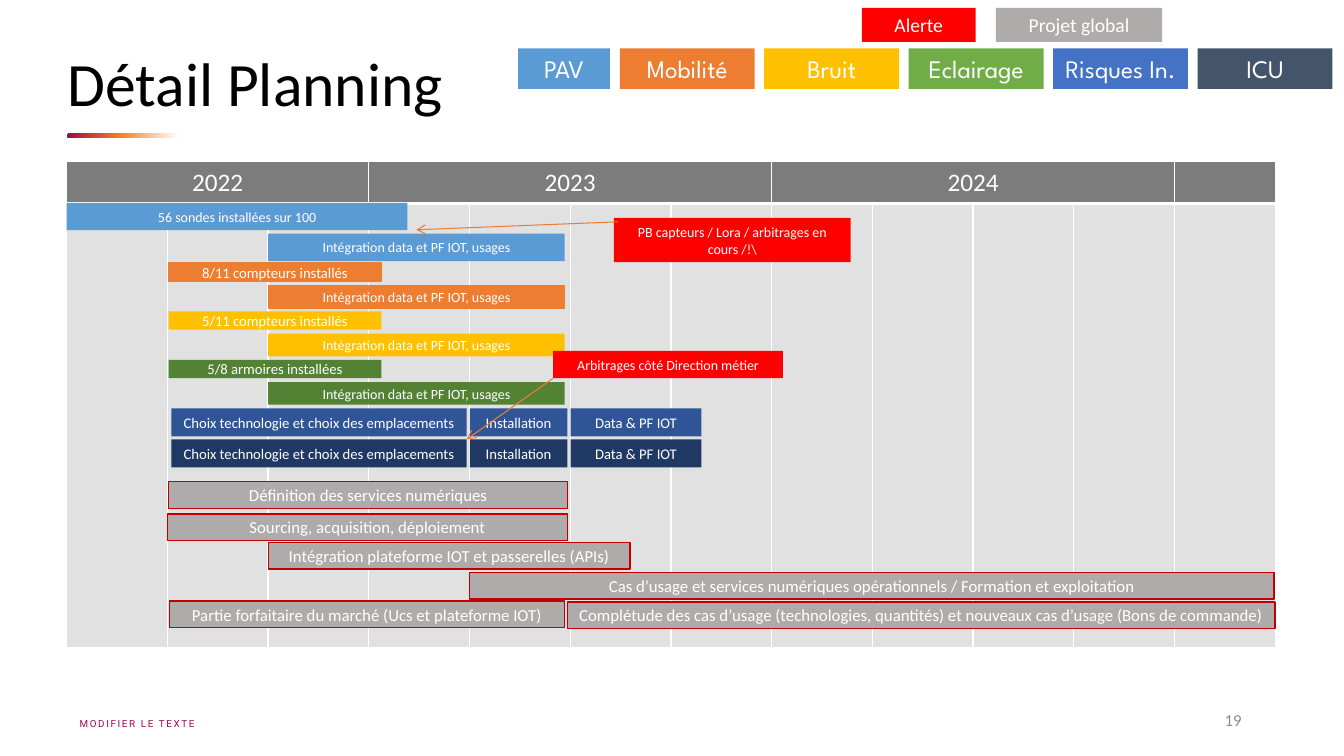
from copy import deepcopy
from dataclasses import dataclass

from lxml import etree
from pptx import Presentation
from pptx import util as u
from pptx.dml.color import RGBColor
from pptx.enum import shapes, text
from pptx.oxml.ns import qn


@dataclass(frozen=True)
class Theme:
    font: str = "Calibri"
    legend_font: str = "League Spartan"
    footer_font: str = "Roboto"
    black: str = "000000"
    white: str = "FFFFFF"
    header: str = "7C7C7C"
    body: str = "E1E1E1"
    number: str = "8C8C8C"
    accent: str = "9C0A4A"
    accent_mid: str = "F58221"
    blue: str = "5B9BD5"
    orange: str = "ED7D31"
    yellow: str = "FFC000"
    green: str = "70AD47"
    dark_green: str = "548235"
    royal: str = "4472C4"
    dark_royal: str = "2F5597"
    slate: str = "44546A"
    navy: str = "203864"
    project: str = "AFABAB"
    outline: str = "C00000"
    alert: str = "FF0000"
    title_size: float = 44
    legend_size: float = 18
    key_size: float = 14
    project_size: float = 12
    step_size: float = 10.5
    bar_size: float = 10
    footer_size: float = 7


class PlanningSlide:
    def __init__(self, page, theme):
        self.page = page
        self.theme = theme

    def set_text(self, frame, words, size, color, align, font=None):
        frame.text = words
        frame.word_wrap = True
        frame.vertical_anchor = text.MSO_ANCHOR.MIDDLE
        para = frame.paragraphs[0]
        para.alignment = align
        span = para.runs[0]
        span.font.size = u.Pt(size)
        span.font.name = font or self.theme.font
        span.font.color.rgb = RGBColor.from_string(color)
        return span

    def label(self, place, words, size, color, align=text.PP_ALIGN.LEFT, font=None):
        box = self.page.shapes.add_textbox(*map(u.Cm, place))
        frame = box.text_frame
        frame.margin_left = frame.margin_right = 0
        span = self.set_text(frame, words, size, color, align, font)
        frame.paragraphs[0].line_spacing = 0.9
        return span

    def bar(self, place, words, fill, size, line=None, font=None):
        box = self.page.shapes.add_shape(
            shapes.MSO_SHAPE.RECTANGLE, *map(u.Cm, place))
        box.shadow.inherit = False
        box.fill.solid()
        box.fill.fore_color.rgb = RGBColor.from_string(fill)
        if line:
            box.line.color.rgb = RGBColor.from_string(line)
            box.line.width = u.Pt(1)
        else:
            box.line.fill.background()
        frame = box.text_frame
        frame.margin_left = frame.margin_right = u.Cm(0.2)
        frame.margin_top = frame.margin_bottom = 0
        self.set_text(frame, words, size, self.theme.white,
                      text.PP_ALIGN.CENTER, font)

    def gradient_rule(self, place, colors):
        rule = self.page.shapes.add_shape(
            shapes.MSO_SHAPE.ROUNDED_RECTANGLE, *map(u.Cm, place))
        rule.adjustments[0] = 0.5
        rule.shadow.inherit = False
        rule.line.fill.background()
        rule.fill.gradient()
        rule.fill.gradient_angle = 0
        stops = rule._element.spPr.find(".//" + qn("a:gsLst"))
        stops.insert(1, deepcopy(stops[0]))
        for stop, color, position in zip(rule.fill.gradient_stops, colors, (0, 0.49, 1)):
            stop.color.rgb = RGBColor.from_string(color)
            stop.position = position

    def arrow(self, start, end):
        line = self.page.shapes.add_connector(
            shapes.MSO_CONNECTOR.STRAIGHT, *map(u.Cm, start + end))
        line.line.color.rgb = RGBColor.from_string(self.theme.orange)
        line.line.width = u.Pt(0.75)
        etree.SubElement(line.line._get_or_add_ln(), qn("a:tailEnd"), type="arrow")
        etree.SubElement(line._element.spPr, qn("a:effectLst"))

    def cell(self, cell, fill, bottom):
        props = cell._tc.get_or_add_tcPr()
        for side in "LRTB":
            width = bottom if side == "B" else 1
            edge = etree.SubElement(props, qn("a:ln" + side), w=str(u.Pt(width)))
            solid = etree.SubElement(edge, qn("a:solidFill"))
            etree.SubElement(solid, qn("a:srgbClr"), val=self.theme.white)
        cell.fill.solid()
        cell.fill.fore_color.rgb = RGBColor.from_string(fill)

    def calendar(self, place, heights, years):
        theme = self.theme
        grid = self.page.shapes.add_table(2, 12, *map(u.Cm, place)).table
        for row, height in zip(grid.rows, heights):
            row.height = u.Cm(height)
        for column in range(12):
            grid.columns[column].width = u.Cm(place[2] / 12)
            self.cell(grid.cell(0, column), theme.header, 3)
            self.cell(grid.cell(1, column), theme.body, 1)
        for year, first, last in years:
            head = grid.cell(0, first)
            head.merge(grid.cell(0, last))
            self.set_text(head.text_frame, year, theme.legend_size, theme.white,
                          text.PP_ALIGN.CENTER)
            head.vertical_anchor = text.MSO_ANCHOR.MIDDLE


def main():
    deck = Presentation()
    deck.slide_width, deck.slide_height = u.Cm(33.87), u.Cm(19.05)
    theme = Theme()
    plan = PlanningSlide(deck.slides.add_slide(deck.slide_layouts[6]), theme)

    # Title and footer
    plan.gradient_rule((1.68, 3.36, 2.8, 0.13),
                       (theme.accent, theme.accent_mid, theme.white))
    plan.label((1.7, 1.17, 11, 2.03), "Détail Planning", theme.title_size, theme.black)
    footer = plan.label((2.01, 18.06, 11.43, 0.41), "MODIFIER LE TEXTE",
                        theme.footer_size, theme.accent, font=theme.footer_font)
    footer._r.get_or_add_rPr().set("spc", "120")
    plan.label((23.93, 17.65, 7.36, 1.02), "19", theme.project_size, theme.number,
               text.PP_ALIGN.RIGHT)

    # Calendar
    plan.calendar((1.68, 4.06, 30.46, 12.25), (1.07, 11.18),
                  (("2022", 0, 2), ("2023", 3, 6), ("2024", 7, 10)))

    # Legend
    plan.bar((21.72, 0.2, 2.87, 0.86), "Alerte", theme.alert, theme.key_size)
    plan.bar((25.1, 0.2, 4.19, 0.86), "Projet global", theme.project, theme.key_size)
    plan.bar((13.06, 1.22, 2.31, 1.02), "PAV", theme.blue, theme.legend_size,
             font=theme.legend_font)
    topics = (("Mobilité", theme.orange), ("Bruit", theme.yellow),
              ("Eclairage", theme.green), ("Risques In.", theme.royal),
              ("ICU", theme.slate))
    for index, (topic, color) in enumerate(topics):
        plan.bar((15.62 + 3.64 * index, 1.22, 3.4, 1.02), topic, color,
                 theme.legend_size, font=theme.legend_font)

    # Sensor installation and data integration
    integration = "Intégration data et PF IOT, usages"
    plan.bar((1.68, 5.11, 8.59, 0.69), "56 sondes installées sur 100",
             theme.blue, theme.bar_size)
    plan.bar((6.76, 5.89, 7.47, 0.69), integration, theme.blue, theme.bar_size)
    installs = (("8/11 compteurs installés", theme.orange, theme.orange),
                ("5/11 compteurs installés", theme.yellow, None),
                ("5/8 armoires installées", theme.dark_green, None))
    for index, (words, color, line) in enumerate(installs):
        top = 6.63 + 1.22 * index
        plan.bar((4.25, top, 5.36, 0.46), words, color, theme.step_size, line)
        plan.bar((6.76, top + 0.56, 7.47, 0.57), integration, color,
                 theme.bar_size, line)

    # Technology choice, installation and data
    steps = (("Choix technologie et choix des emplacements", 4.32, 7.44),
             ("Installation", 11.84, 2.46), ("Data & PF IOT", 14.38, 3.3))
    for top, color in ((10.29, theme.dark_royal), (11.07, theme.navy)):
        for words, left, width in steps:
            plan.bar((left, top, width, 0.71), words, color, theme.step_size)

    # Global project
    phases = (
        ("Définition des services numériques", 4.25, 12.14, 10.06),
        ("Sourcing, acquisition, déploiement", 4.22, 12.95, 10.08),
        ("Intégration plateforme IOT et passerelles (APIs)", 6.76, 13.67, 9.12),
        ("Cas d’usage et services numériques opérationnels / Formation et exploitation",
         11.84, 14.43, 20.27),
        ("Partie forfaitaire du marché (Ucs et plateforme IOT)", 4.27, 15.15, 9.96),
        ("Complétude des cas d’usage (technologies, quantités) et nouveaux cas d’usage "
         "(Bons de commande)", 14.3, 15.17, 17.83))
    for words, left, top, width in phases:
        plan.bar((left, top, width, 0.67), words, theme.project,
                 theme.project_size, theme.outline)

    # Alerts
    plan.bar((15.47, 5.49, 5.97, 1.12), "PB capteurs / Lora / arbitrages en cours /!\\",
             theme.alert, theme.bar_size)
    plan.bar((13.94, 8.84, 5.79, 0.69), "Arbitrages côté Direction métier",
             theme.alert, theme.bar_size)
    plan.arrow((13.94, 9.53), (11.76, 11.07))
    plan.arrow((15.57, 5.59), (10.49, 5.79))

    deck.save("out.pptx")


if __name__ == "__main__":
    main()
